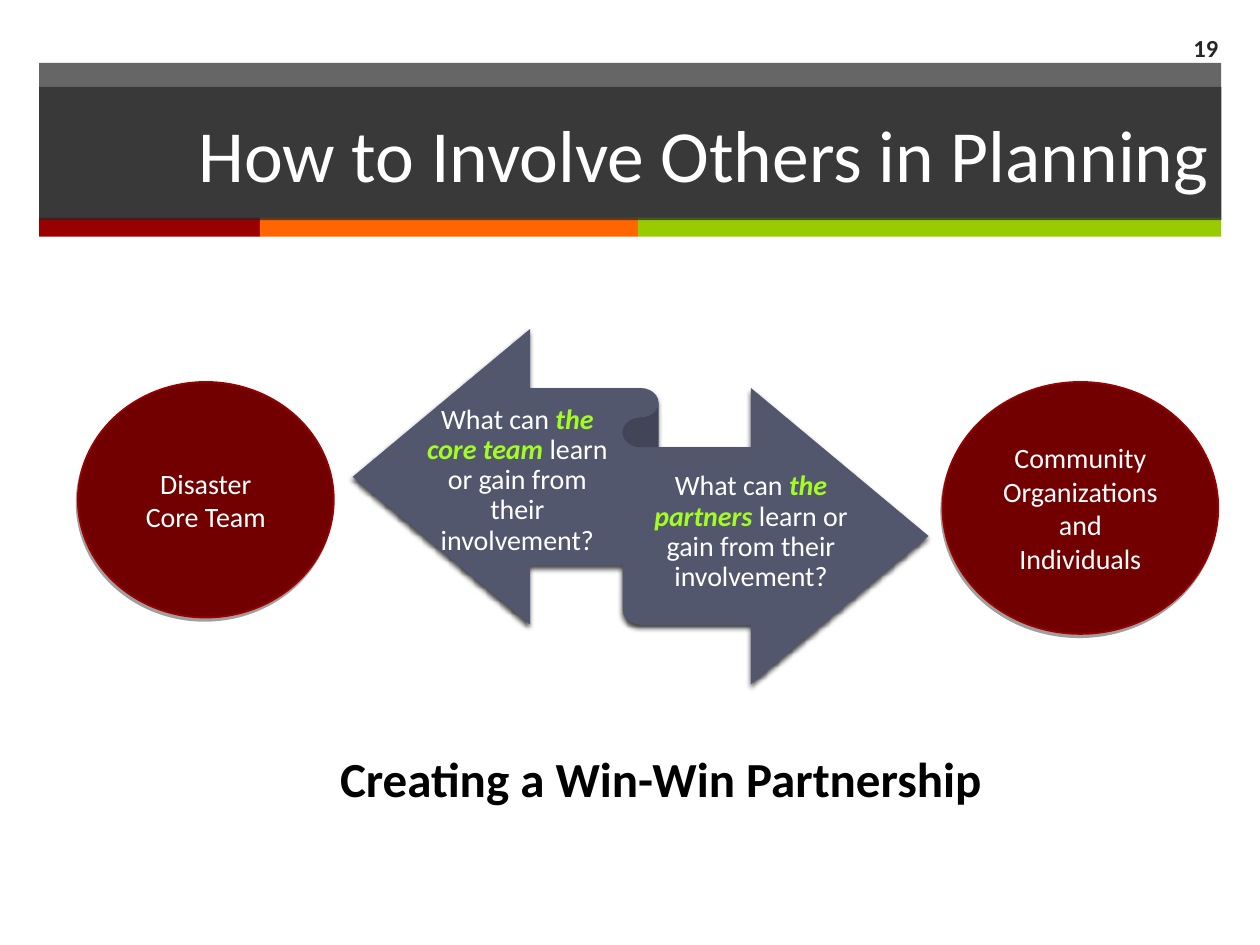
from lxml.etree import SubElement
from pptx import Presentation
from pptx.dml.color import RGBColor
from pptx.enum.shapes import MSO_SHAPE
from pptx.enum.text import MSO_ANCHOR, PP_ALIGN
from pptx.oxml.ns import qn
from pptx.util import Cm, Pt

FONT = "Calibri"
WHITE, BLACK, CHARCOAL, LIME = "FFFFFF", "000000", "262626", "A3FC24"
MAROON, RED, SLATE, GRAY = "730000", "990000", "53576D", "808080"

TITLE = "How to Involve Others in Planning"
BAND_LEFT, BAND_WIDTH = 0.79, 23.83
BANDS = [(1.27, 3.15), (1.75, 2.69)]  # top, height; the second holds the title
STRIPES = [(4.45, RED), (7.62, "FF6600"), (11.76, "99CC00")]
STRIPE_TOP, STRIPE_HEIGHT = 4.39, 0.38

RIBBON_BOX = (7.11, 6.63, 11.61, 7.16)
QUESTIONS = [
    ((8.51, 8.56, 3.84, 2.29),
     ["What can ", "the core team ", "learn or gain from their involvement?"]),
    ((12.88, 9.6, 4.52, 2.29),
     ["What can ", "the partners", " learn or gain from their involvement?"]),
]
GROUPS = [
    ((1.57, 7.7, 5.16, 4.75), ["Disaster", "Core Team"]),
    ((19, 7.7, 5.56, 5.08), ["Community Organizations and Individuals"]),
]
CAPTION = "Creating a Win-Win Partnership"
CAPTION_BOX = (6.17, 14.96, 14.3, 1.45)
NUMBER, NUMBER_BOX = "19", (23.06, 0.46, 1.75, 0.99)


def rgb(color):
    return RGBColor.from_string(color)


def fill_shape(sp, color, alpha=100):
    sp.fill.solid()
    sp.fill.fore_color.rgb = rgb(color)
    if alpha < 100:
        clr = sp.fill._xPr.find(qn("a:solidFill"))[0]
        SubElement(clr, qn("a:alpha"), val=str(alpha * 1000))


def add_filled(s, kind, box, color, alpha=100):
    sp = s.shapes.add_shape(kind, *map(Cm, box))
    sp.shadow.inherit = False
    sp.line.fill.background()
    fill_shape(sp, color, alpha)
    return sp


def add_shadow(sp, color, blur):
    effects = sp.element.spPr.find(qn("a:effectLst"))
    shadow = SubElement(effects, qn("a:outerShdw"), blurRad=str(Pt(blur)),
                        dist=str(Pt(2)), dir=str(110 * 60000),
                        algn="ctr", rotWithShape="0")
    clr = SubElement(shadow, qn("a:srgbClr"), val=color)
    SubElement(clr, qn("a:alpha"), val="75000")


def style(p, size, color, align=PP_ALIGN.CENTER, bold=False):
    p.alignment = align
    p.font.name, p.font.size, p.font.bold = FONT, Pt(size), bold
    p.font.color.rgb = rgb(color)


def add_text_frame(s, box, anchor):
    tf = s.shapes.add_textbox(*map(Cm, box)).text_frame
    tf.word_wrap = True
    tf.vertical_anchor = anchor
    return tf


def add_header(s):
    (top, height), (title_top, title_height) = BANDS
    add_filled(s, MSO_SHAPE.RECTANGLE, (BAND_LEFT, top, BAND_WIDTH, height),
               CHARCOAL, 70)
    left = BAND_LEFT
    for width, color in STRIPES:
        add_filled(s, MSO_SHAPE.RECTANGLE,
                   (left, STRIPE_TOP, width, STRIPE_HEIGHT), color)
        left += width

    title = s.shapes.title
    title.left, title.top = Cm(BAND_LEFT), Cm(title_top)
    title.width, title.height = Cm(BAND_WIDTH), Cm(title_height)
    fill_shape(title, CHARCOAL, 70)
    title.element.getparent().append(title.element)  # in front of the bands
    tf = title.text_frame
    tf.text = TITLE
    tf.vertical_anchor = MSO_ANCHOR.MIDDLE
    style(tf.paragraphs[0], 42, WHITE, PP_ALIGN.RIGHT)


def add_question(s, box, parts):
    """Write a question whose middle part is highlighted."""
    tf = add_text_frame(s, box, MSO_ANCHOR.MIDDLE)
    tf.margin_left = tf.margin_right = 0
    tf.margin_top, tf.margin_bottom = Cm(0.15), Cm(0.18)
    p = tf.paragraphs[0]
    style(p, 16, WHITE)
    p.line_spacing = 0.9
    for i, part in enumerate(parts):
        r = p.add_run()
        r.text = part
        r.font.name, r.font.size = FONT, Pt(16)
        r.font.bold = r.font.italic = i == 1
        r.font.color.rgb = rgb(LIME if i == 1 else WHITE)


def add_group(s, box, lines):
    sp = add_filled(s, MSO_SHAPE.OVAL, box, MAROON)
    sp.line.color.rgb = rgb(RED)
    sp.line.width = Pt(1)
    add_shadow(sp, GRAY, 0)
    tf = sp.text_frame
    tf.word_wrap = True
    tf.text = "\n".join(lines)
    for p in tf.paragraphs:
        style(p, 16, WHITE)


def add_label(s, box, text, size, color, align, anchor):
    tf = add_text_frame(s, box, anchor)
    tf.text = text
    style(tf.paragraphs[0], size, color, align, bold=True)


def main():
    prs = Presentation()
    prs.slide_width, prs.slide_height = Cm(25.4), Cm(19.05)
    s = prs.slides.add_slide(prs.slide_layouts[5])
    add_header(s)
    ribbon = add_filled(s, MSO_SHAPE.LEFT_RIGHT_RIBBON, RIBBON_BOX, SLATE)
    add_shadow(ribbon, BLACK, 3)
    for box, parts in QUESTIONS:
        add_question(s, box, parts)
    for box, lines in GROUPS:
        add_group(s, box, lines)
    add_label(s, CAPTION_BOX, CAPTION, 28, BLACK, PP_ALIGN.CENTER, MSO_ANCHOR.TOP)
    add_label(s, NUMBER_BOX, NUMBER, 14, CHARCOAL, PP_ALIGN.RIGHT, MSO_ANCHOR.MIDDLE)
    prs.save("out.pptx")


if __name__ == "__main__":
    main()
